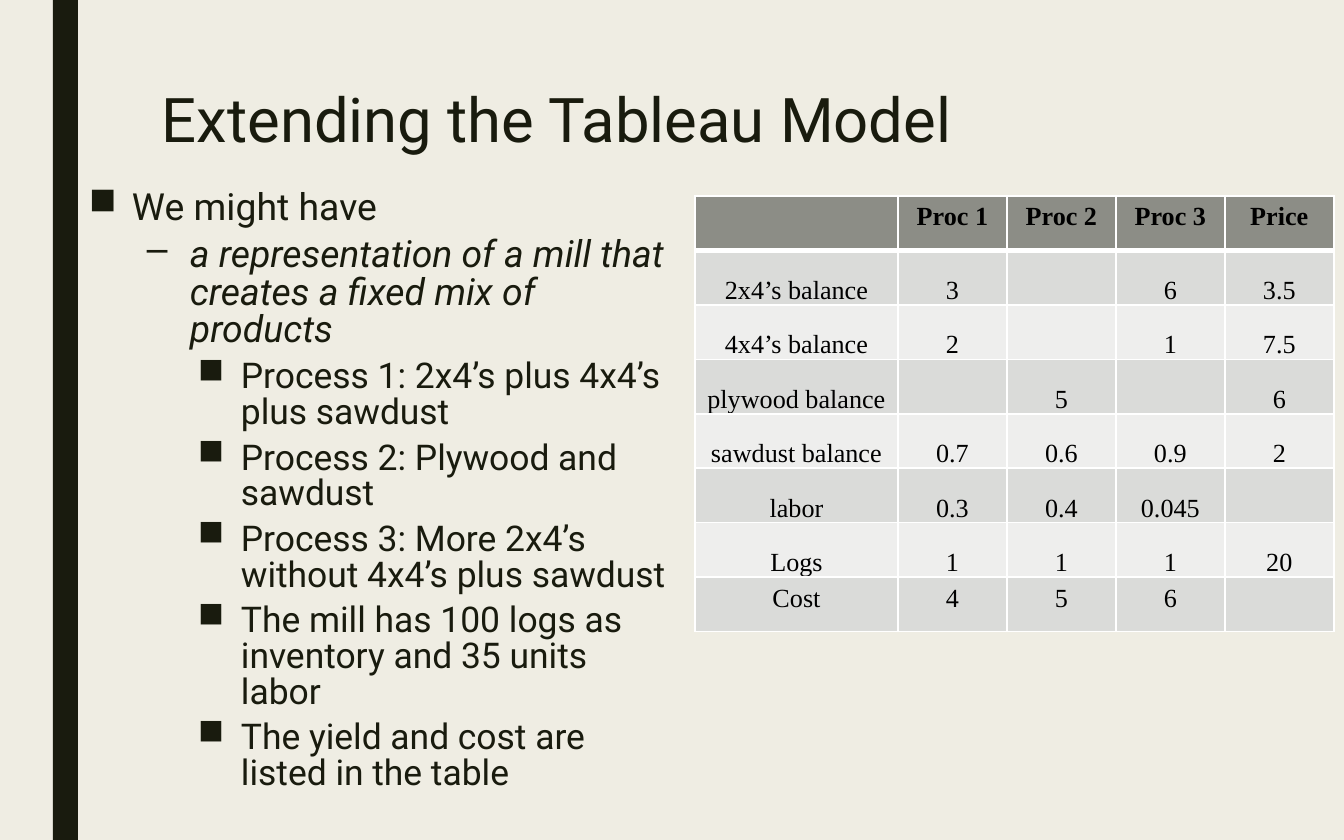
from lxml import etree
from pptx import Presentation, util as u
from pptx.dml.color import RGBColor
from pptx.enum import shapes, text
from pptx.oxml import ns

SCALE = 914400 / 134.4
PAPER = RGBColor(0xEF, 0xED, 0xE3)
INK = RGBColor(0x19, 0x1B, 0x0E)
BLACK = RGBColor(0, 0, 0)
HEAD = RGBColor(0x8C, 0x8D, 0x86)
DARK = RGBColor(0xDA, 0xDB, 0xD9)
LIGHT = RGBColor(0xEE, 0xEE, 0xED)


def px(n):
    return u.Emu(round(n * SCALE))


def add_run(par, words, size, face, color, bold=False, slant=False):
    run = par.add_run()
    run.text = words
    font = run.font
    font.size, font.name = u.Pt(size), face
    font.bold, font.italic = bold, slant
    font.color.rgb = color


deck = Presentation()
deck.slide_width, deck.slide_height = px(1344), px(840)
slide = deck.slides.add_slide(deck.slide_layouts[6])
slide.background.fill.solid()
slide.background.fill.fore_color.rgb = PAPER

# Side bar
bar = slide.shapes.add_shape(shapes.MSO_SHAPE.RECTANGLE, px(53), 0, px(25), px(840))
bar.shadow.inherit = False
bar.fill.solid()
bar.fill.fore_color.rgb = INK
bar.line.fill.background()

# Text frames
frames = []
for box in [(151, 85, 1059, 181), (78, 185, 605, 560)]:
    frame = slide.shapes.add_textbox(*map(px, box)).text_frame
    frame.word_wrap = True
    frame.margin_left = frame.margin_right = px(11)
    frame.margin_top = frame.margin_bottom = px(5)
    frames.append(frame)
title, body = frames

# Title
par = title.paragraphs[0]
par.line_spacing = 0.89
add_run(par, "Extending the Tableau Model", 33, "Roboto", INK)

# Bullet list: left indent, mark, size, space before for each level
LEVELS = [(43, "■", 20, 7.5), (101, "–", 20, 3.8), (152, "■", 19, 3.8)]
POINTS = [
    (0, "We might have"),
    (1, "a representation of a mill that creates a fixed mix of products"),
    (2, "Process 1: 2x4’s plus 4x4’s plus sawdust"),
    (2, "Process 2: Plywood and sawdust"),
    (2, "Process 3: More 2x4’s without 4x4’s plus sawdust"),
    (2, "The mill has 100 logs as inventory and 35 units labor"),
    (2, "The yield and cost are listed in the table"),
]
for i, (level, words) in enumerate(POINTS):
    par = body.add_paragraph() if i else body.paragraphs[0]
    left, mark, size, before = LEVELS[level]
    par.level = level
    par.line_spacing = 0.84
    par.space_before, par.space_after = u.Pt(before), u.Pt(1.5)
    props = par._p.get_or_add_pPr()
    props.set("marL", str(px(left)))
    props.set("indent", str(px(-43)))
    etree.SubElement(props, ns.qn("a:buChar")).set("char", mark)
    add_run(par, words, size, "Roboto", INK, slant=level == 1)

# Process table
ROWS = [
    ["", "Proc 1", "Proc 2", "Proc 3", "Price"],
    ["2x4’s balance", "3", "", "6", "3.5"],
    ["4x4’s balance", "2", "", "1", "7.5"],
    ["plywood balance", "", "5", "", "6"],
    ["sawdust balance", "0.7", "0.6", "0.9", "2"],
    ["labor", "0.3", "0.4", "0.045", ""],
    ["Logs", "1", "1", "1", "20"],
    ["Cost", "4", "5", "6", ""],
]
last = len(ROWS) - 1
grid = slide.shapes.add_table(len(ROWS), 5, px(695), px(196), px(639), px(436)).table
for i, col in enumerate(grid.columns):
    col.width = px(109 if i else 203)

for r, row in enumerate(ROWS):
    grid.rows[r].height = px(436 / len(ROWS))
    for c, words in enumerate(row):
        cell = grid.cell(r, c)
        cell.fill.solid()
        cell.fill.fore_color.rgb = HEAD if r == 0 else DARK if r % 2 else LIGHT
        if words and 0 < r < last:
            cell.vertical_anchor = text.MSO_ANCHOR.BOTTOM
            cell.margin_left = cell.margin_right = cell.margin_top = px(1)
            cell.margin_bottom = 0
        if words:
            par = cell.text_frame.paragraphs[0]
            par.alignment = text.PP_ALIGN.CENTER
            add_run(par, words, 14, "Times New Roman", BLACK, bold=r == 0)

        # White borders, heavier under the header
        props = cell._tc.get_or_add_tcPr()
        for i, side in enumerate("LRTB"):
            heavy = (r, side) in [(0, "B"), (1, "T")]
            line = etree.Element(ns.qn("a:ln" + side), w=str(u.Pt(3 if heavy else 1)))
            fill = etree.SubElement(line, ns.qn("a:solidFill"))
            etree.SubElement(fill, ns.qn("a:srgbClr")).set("val", "FFFFFF")
            props.insert(i, line)

deck.save("out.pptx")
